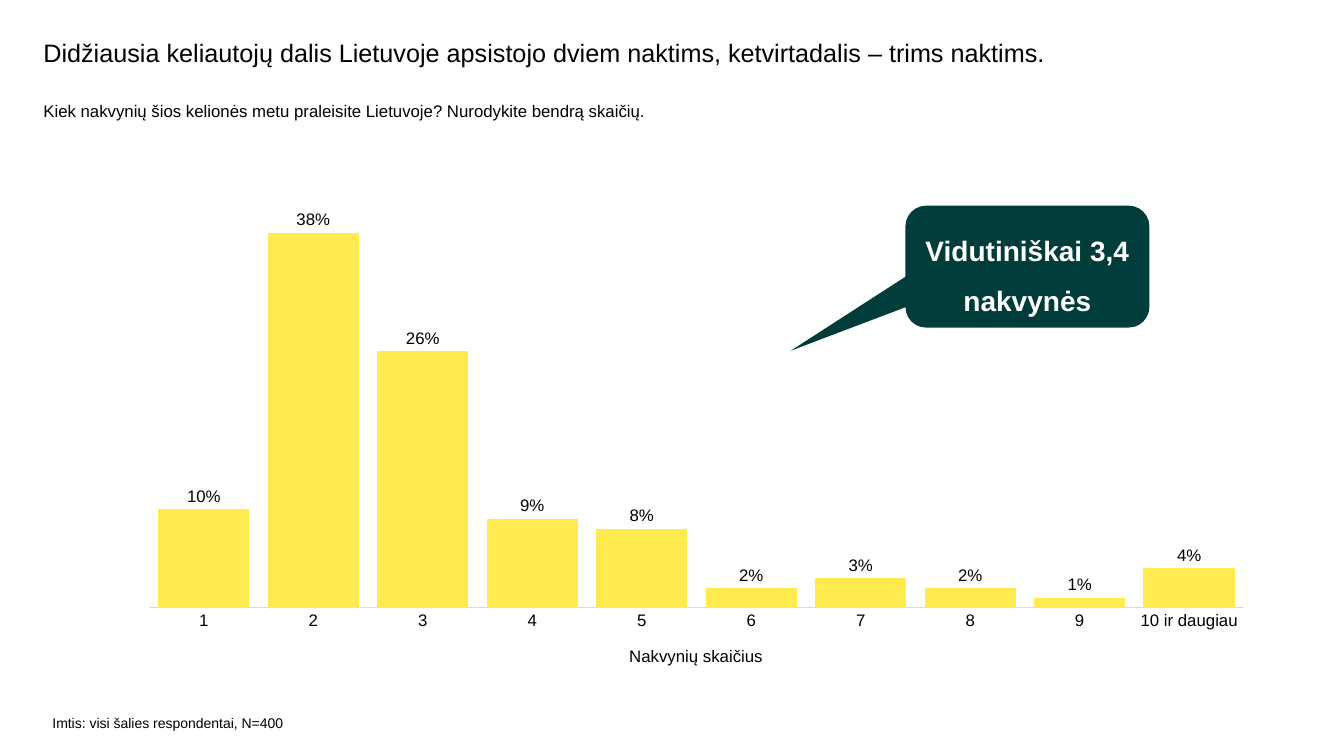
from lxml import etree
from pptx import Presentation
from pptx.chart.data import CategoryChartData
from pptx.dml.color import RGBColor
from pptx.enum.chart import XL_CHART_TYPE as ChartType, XL_LABEL_POSITION as LabelPosition
from pptx.enum.chart import XL_TICK_MARK as TickMark
from pptx.enum.shapes import MSO_SHAPE as Shape
from pptx.enum.text import MSO_ANCHOR as Anchor, PP_ALIGN as Align
from pptx.oxml.ns import qn
from pptx.util import Inches, Pt

COLORS = {"text": "000000", "bar": "FFEB50", "callout": "003C3A", "white": "FFFFFF", "axis": "D9D9D9"}
FONT = "Arial"


def style_font(font, size, color="text", bold=False):
    font.name = FONT
    font.size = Pt(size)
    font.bold = bold
    font.color.rgb = RGBColor.from_string(COLORS[color])


def place(element, index, **settings):
    """Give a chart part a fixed layout, as fractions of the chart."""
    for old in element.findall(qn("c:layout")):
        element.remove(old)
    layout = etree.Element(qn("c:layout"))
    manual = etree.SubElement(layout, qn("c:manualLayout"))
    for name, value in settings.items():
        etree.SubElement(manual, qn("c:" + name)).set("val", str(value))
    element.insert(index, layout)


deck = Presentation()
deck.slide_width, deck.slide_height = Inches(13.33), Inches(7.5)
page = deck.slides.add_slide(deck.slide_layouts[6])

# Title, question and sample note
texts = [
    ("Didžiausia keliautojų dalis Lietuvoje apsistojo dviem naktims, ketvirtadalis – trims naktims.",
     (0.43, 0.4, 11.25, 0.6), 18, 0.9),
    ("Kiek nakvynių šios kelionės metu praleisite Lietuvoje? Nurodykite bendrą skaičių.",
     (0.43, 1, 11.89, 0.61), 12, 1.0),
    ("Imtis: visi šalies respondentai, N=400", (0.52, 7.09, 2.53, 0.24), 10, 1.0),
]
for text, bounds, size, spacing in texts:
    box = page.shapes.add_textbox(*map(Inches, bounds))
    frame = box.text_frame
    frame.word_wrap = True
    frame.margin_left = frame.margin_right = frame.margin_top = frame.margin_bottom = 0
    para = frame.paragraphs[0]
    para.line_spacing = spacing
    span = para.add_run()
    span.text = text
    style_font(span.font, size)

# Column chart of nights stayed
data = CategoryChartData(number_format="0%")
data.categories = [str(night) for night in range(1, 10)] + ["10 ir daugiau"]
data.add_series("Dalis", [0.1, 0.38, 0.26, 0.09, 0.08, 0.02, 0.03, 0.02, 0.01, 0.04])
chart = page.shapes.add_chart(
    ChartType.COLUMN_CLUSTERED, Inches(1.3), Inches(1.6), Inches(11.16), Inches(5.05), data).chart
chart.has_legend = False
chart.has_title = False
style_font(chart.font, 12)
place(chart.plots[0]._element.getparent(), 0, layoutTarget="inner", xMode="edge", yMode="edge",
      x=0.016, y=0.102, w=0.973, h=0.78)

# Bars and their labels
plot = chart.plots[0]
plot.gap_width = 20
plot.vary_by_categories = False
bars = plot.series[0]
bars.format.fill.solid()
bars.format.fill.fore_color.rgb = RGBColor.from_string(COLORS["bar"])
labels = bars.data_labels
labels.show_value = True
labels.number_format, labels.number_format_is_linked = "0%", False
labels.position = LabelPosition.OUTSIDE_END
style_font(labels.font, 12)

# Axes
shares = chart.value_axis
shares.visible = False
shares.has_major_gridlines = False
shares.minimum_scale, shares.maximum_scale = 0, 0.4
nights = chart.category_axis
nights.major_tick_mark = nights.minor_tick_mark = TickMark.NONE
nights.format.line.color.rgb = RGBColor.from_string(COLORS["axis"])
nights.format.line.width = Pt(0.75)
style_font(nights.tick_labels.font, 12)
span = nights.axis_title.text_frame.paragraphs[0].add_run()
span.text = "Nakvynių skaičius"
style_font(span.font, 12)
place(nights.axis_title._element, 1, xMode="edge", yMode="edge", x=0.44, y=0.95)

# Callout with the average
callout = page.shapes.add_shape(
    Shape.ROUNDED_RECTANGULAR_CALLOUT, Inches(8.98), Inches(2.04), Inches(2.42), Inches(1.21))
for index, value in enumerate((-0.97, 0.69, 0.17)):
    callout.adjustments[index] = value
callout.shadow.inherit = False
callout.fill.solid()
callout.fill.fore_color.rgb = RGBColor.from_string(COLORS["callout"])
callout.line.fill.background()
callout.text_frame.word_wrap = True
callout.text_frame.vertical_anchor = Anchor.MIDDLE
para = callout.text_frame.paragraphs[0]
para.alignment = Align.CENTER
para.line_spacing = 1.5
span = para.add_run()
span.text = "Vidutiniškai 3,4 nakvynės"
style_font(span.font, 20, "white", bold=True)

deck.save("out.pptx")
